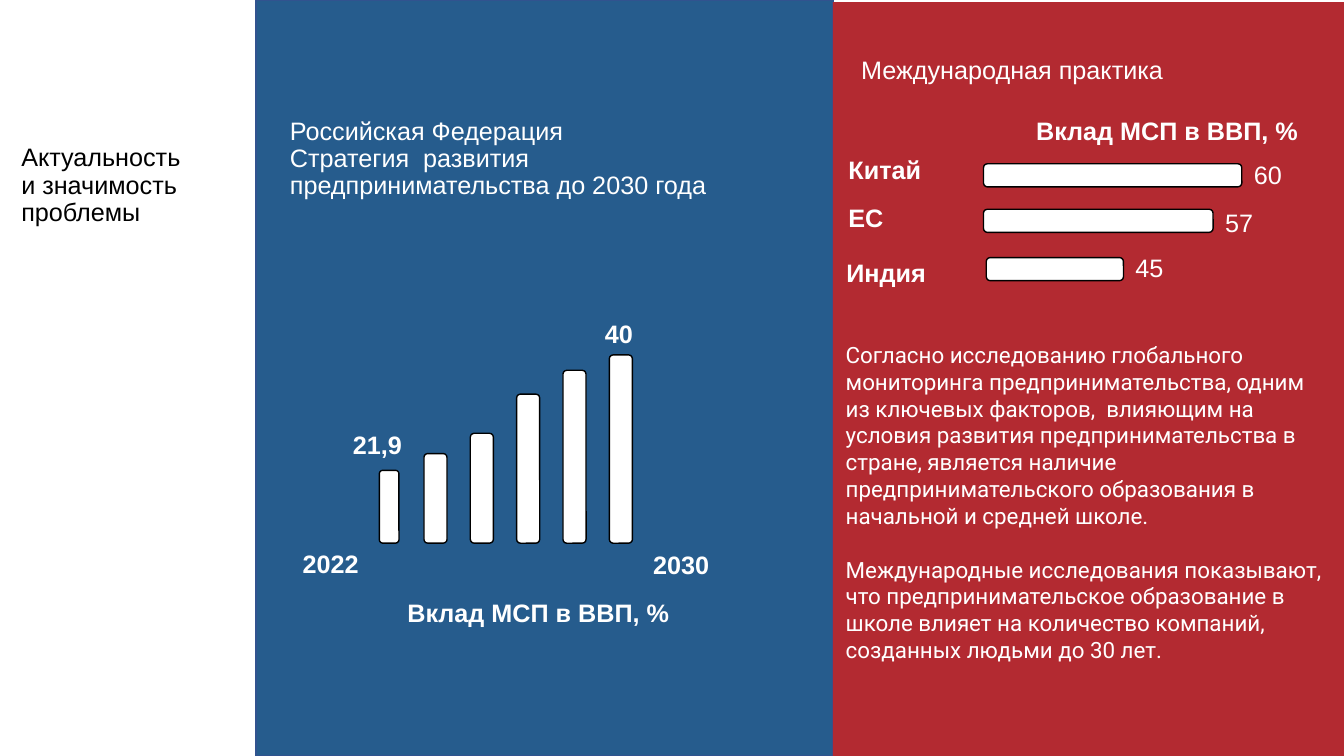
import pptx
import pptx.dml.color
import pptx.enum.shapes
import pptx.enum.text
import pptx.util
from pptx.util import Pt

SHAPES = pptx.enum.shapes.MSO_SHAPE
ANCHOR = pptx.enum.text.MSO_ANCHOR
ALIGN = pptx.enum.text.PP_ALIGN
WHITE, BLACK = "FFFFFF", "000000"
BLUE, BLUE_EDGE, RED = "265C8D", "31538F", "B32A31"
LABEL_HEIGHT = 29
BAR_THICKNESS = 16.5


def colour(hex_string):
    return pptx.dml.color.RGBColor.from_string(hex_string)


def set_attributes(target, values):
    for name, value in values.items():
        setattr(target, name, value)


def write(shape, lines, color=WHITE, anchor=ANCHOR.TOP, font=None, paragraph_format=None):
    """Fill a shape with one paragraph per line, formatted from the given values."""
    frame = shape.text_frame
    set_attributes(frame, {
        "text": "\n".join(lines), "word_wrap": True, "vertical_anchor": anchor,
        "auto_size": pptx.enum.text.MSO_AUTO_SIZE.NONE,
        "margin_left": Pt(7.2), "margin_right": Pt(7.2),
        "margin_top": Pt(3.6), "margin_bottom": Pt(3.6),
    })
    for paragraph in frame.paragraphs:
        set_attributes(paragraph, {"alignment": ALIGN.LEFT, **(paragraph_format or {})})
        for run in paragraph.runs:
            set_attributes(run.font, {"name": "Arial", "size": Pt(18), "bold": False, **(font or {})})
            run.font.color.rgb = colour(color)


def add_text(slide, left, top, width, height, lines, **formats):
    text_box = slide.shapes.add_textbox(Pt(left), Pt(top), Pt(width), Pt(height))
    write(text_box, lines, **formats)


def add_label(slide, left, top, width, text, bold=True, **formats):
    add_text(slide, left, top, width, LABEL_HEIGHT, [text], font={"bold": bold}, **formats)


def add_block(slide, kind, left, top, width, height, fill, edge=None):
    block = slide.shapes.add_shape(kind, Pt(left), Pt(top), Pt(width), Pt(height))
    block.shadow.inherit = False
    block.fill.solid()
    block.fill.fore_color.rgb = colour(fill)
    if edge:
        block.line.color.rgb = colour(edge)
        block.line.width = Pt(1)
    else:
        block.line.fill.background()


def add_bar(slide, left, top, width, height):
    add_block(slide, SHAPES.ROUNDED_RECTANGLE, left, top, width, height, WHITE, BLACK)


def add_title(slide, left, top, width, height):
    title = slide.shapes.title
    set_attributes(title, {"left": Pt(left), "top": Pt(top), "width": Pt(width), "height": Pt(height)})
    write(title, ["Актуальность\vи значимость проблемы"], color=BLACK,
          anchor=ANCHOR.MIDDLE, paragraph_format={"line_spacing": 0.9})


def add_russia_panel(slide, left, top, width, height):
    add_block(slide, SHAPES.RECTANGLE, left, top, width, height, BLUE, BLUE_EDGE)
    add_text(slide, left + 17, top + 81, 369, 66,
             ["Российская Федерация", "Стратегия  развития предпринимательства до 2030 года"],
             paragraph_format={"line_spacing": 0.9})

    first_center, pitch, baseline = left + 95, 33.1, top + 388
    for index, bar_height in enumerate([52, 64, 78.5, 106.5, 123.5, 134.5]):
        bar_width = BAR_THICKNESS if index else 14
        add_bar(slide, first_center + index * pitch - bar_width / 2,
                baseline - bar_height, bar_width, bar_height)

    for x, y, text in [(62, 303, "21,9"), (242, 224, "40"), (26, 388, "2022"), (276.5, 389, "2030")]:
        add_label(slide, left + x, top + y, 57, text)
    add_label(slide, left + 17, top + 423, 369, "Вклад МСП в ВВП, %",
              paragraph_format={"alignment": ALIGN.CENTER})


def add_world_panel(slide, left, top, width, height):
    add_block(slide, SHAPES.RECTANGLE, left, top, width, height, RED)
    add_label(slide, left + 13, top + 34, 300, "Международная практика", bold=False)
    add_label(slide, left + 138, top + 77.5, 215, "Вклад МСП в ВВП, %")

    countries = [  # name, name left, name top, bar left, bar top, bar length, value, value top
        ("Китай", 4, 105, 107.5, 115.5, 184.5, "60", 108.5),
        ("ЕС", 4, 139.5, 107.5, 148, 164, "57", 143),
        ("Индия", 2.5, 179, 109.5, 182.5, 98, "45", 175.5),
    ]
    for name, name_left, name_top, bar_left, bar_top, length, value, value_top in countries:
        add_label(slide, left + name_left, top + name_top, 91, name)
        add_bar(slide, left + bar_left, top + bar_top, length, BAR_THICKNESS)
        add_label(slide, left + bar_left + length + 1.5, top + value_top, 36, value, bold=False)

    research = [
        "Согласно исследованию глобального мониторинга предпринимательства, одним из ключевых "
        "факторов,  влияющим на условия развития предпринимательства в стране, является наличие "
        "предпринимательского образования в начальной и средней школе.",
        "Международные исследования показывают, что предпринимательское образование в школе "
        "влияет на количество компаний, созданных людьми до 30 лет.",
    ]
    add_text(slide, left + 2, top + 238.5, 361, 220, research[:1] + research[1:],
             font={"name": "Roboto", "size": Pt(16)}, paragraph_format={"space_after": Pt(19)})


def main():
    presentation = pptx.Presentation()
    presentation.slide_width, presentation.slide_height = Pt(960), Pt(540)
    slide = presentation.slides.add_slide(presentation.slide_layouts[5])
    add_title(slide, 8, 80.5, 200, 104.5)
    add_russia_panel(slide, 183, 0, 412, 540)
    add_world_panel(slide, 595, 1.5, 365, 538.5)
    presentation.save("out.pptx")


if __name__ == "__main__":
    main()
